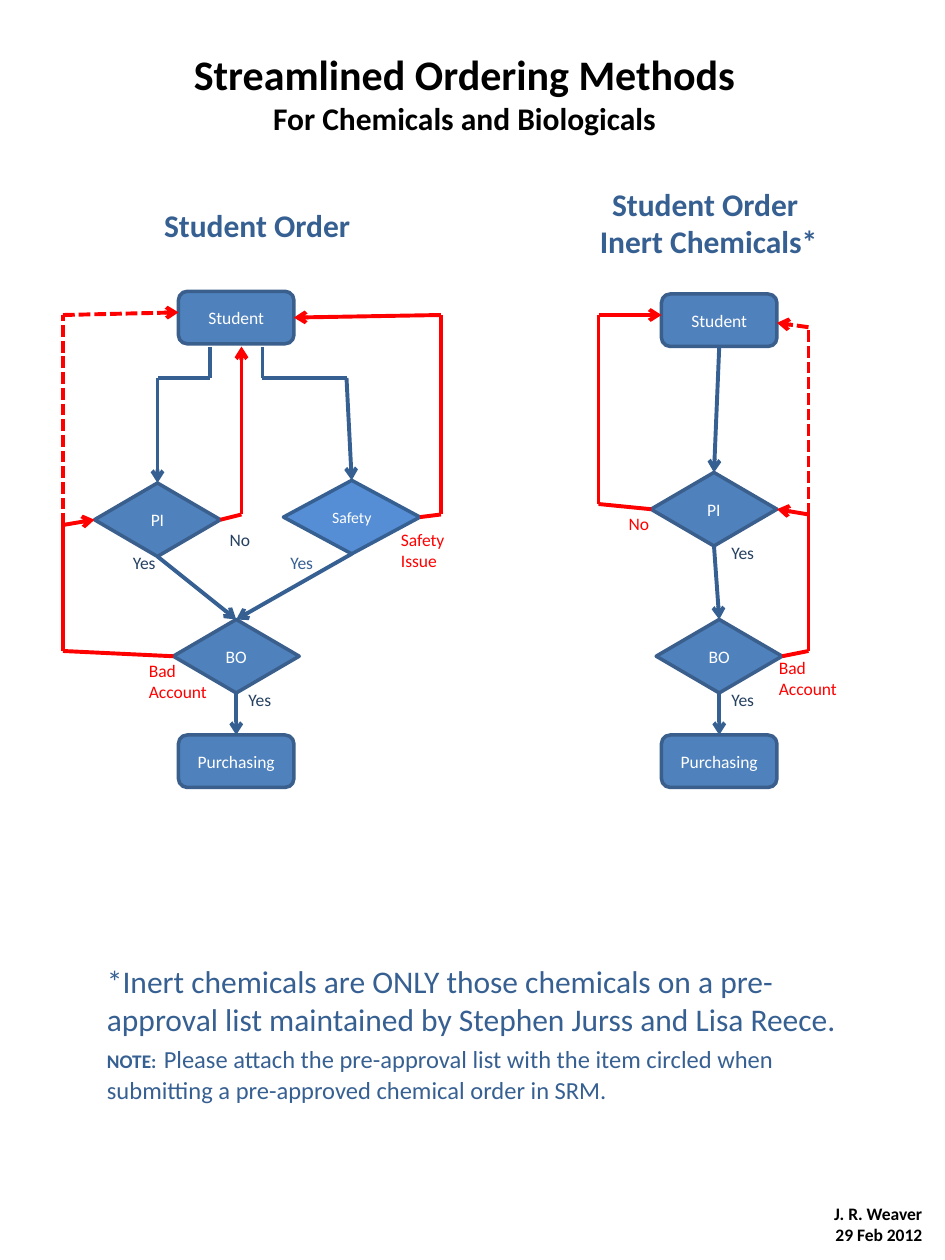
import pptx
import pptx.util
import pptx.dml.color
import pptx.enum.dml
import pptx.enum.shapes
import pptx.enum.text
import pptx.oxml

Pt = pptx.util.Pt
Kind = pptx.enum.shapes.MSO_SHAPE
Align = pptx.enum.text.PP_ALIGN
COLORS = {"black": "000000", "white": "FFFFFF", "fill": "4F81BD", "edge": "3A5F8C",
          "light": "558ED5", "blue": "376092", "navy": "254061", "red": "FF0000"}
STEP, TEST = Kind.FLOWCHART_ALTERNATE_PROCESS, Kind.FLOWCHART_DECISION
SIZES = {STEP: (66, 30), TEST: (72, 42)}


def rgb(name):
    return pptx.dml.color.RGBColor.from_string(COLORS[name])


def put_run(para, text, size, color, bold=False):
    run = para.add_run()
    run.text = text
    font = run.font
    font.name, font.size, font.bold = "Calibri", Pt(size), bold
    font.color.rgb = rgb(color)


def put_text(slide, box, lines, size, color, align=Align.LEFT, bold=False, wrap=True):
    """Put one paragraph for each line in a text box."""
    frame = slide.shapes.add_textbox(*map(Pt, box)).text_frame
    frame.word_wrap = wrap
    for i, line in enumerate(lines):
        para = frame.add_paragraph() if i else frame.paragraphs[0]
        para.alignment = align
        put_run(para, line, size, color, bold)
    return frame


def put_node(slide, kind, x, y, text, wide=None, fill="fill", edge="edge", size=10):
    width, height = SIZES[kind]
    node = slide.shapes.add_shape(kind, Pt(x), Pt(y), Pt(wide or width), Pt(height))
    node.shadow.inherit = False
    node.fill.solid()
    node.fill.fore_color.rgb = rgb(fill)
    node.line.color.rgb = rgb(edge)
    node.line.width = Pt(2)
    frame = node.text_frame
    frame.vertical_anchor = pptx.enum.text.MSO_ANCHOR.MIDDLE
    frame.paragraphs[0].alignment = Align.CENTER
    put_run(frame.paragraphs[0], text, size, "white")
    return node


def put_path(slide, left, top, nodes, stops, color, dash=False):
    """Draw lines from stop to stop, with an arrowhead at the last one.

    A stop is a local point, or a node's name with the number of its side.
    """
    last = len(stops) - 2
    for i, (start, end) in enumerate(zip(stops, stops[1:])):
        line = slide.shapes.add_connector(pptx.enum.shapes.MSO_CONNECTOR.STRAIGHT, 0, 0, 0, 0)
        if start[0] in nodes:
            line.begin_connect(nodes[start[0]], start[1])
        else:
            line.begin_x, line.begin_y = Pt(left + start[0]), Pt(top + start[1])
        if end[0] in nodes:
            line.end_connect(nodes[end[0]], end[1])
        else:
            line.end_x, line.end_y = Pt(left + end[0]), Pt(top + end[1])
        line.line.color.rgb = rgb(color)
        line.line.width = Pt(2.25)
        if dash:
            line.line.dash_style = pptx.enum.dml.MSO_LINE.SQUARE_DOT
        props = line._element.spPr
        if i == last:
            tip = pptx.oxml.parse_xml(
                '<a:tailEnd xmlns:a="http://schemas.openxmlformats.org/drawingml/2006/main"'
                ' type="arrow"/>')
            line.line._get_or_add_ln().append(tip)
        props.append(pptx.oxml.parse_xml(
            '<a:effectLst xmlns:a="http://schemas.openxmlformats.org/drawingml/2006/main"/>'))


def put_flow(slide, left, top, parts, paths, notes):
    """Draw one flow chart; all its places are relative to left and top."""
    nodes = {}
    for name, kind, x, y, style in parts:
        nodes[name] = put_node(slide, kind, left + x, top + y, name, **style)
    for color, dash, stops in paths:
        put_path(slide, left, top, nodes, stops, color, dash)
    for x, y, lines, color in notes:
        pair = len(lines) > 1
        box = (left + x, top + y, 48 if pair else 30, 32 if pair else 19.5)
        put_text(slide, box, lines, 10, color, Align.LEFT if pair else Align.RIGHT)


def put_left(slide, left, top):
    parts = [("Student", STEP, 66, 4.5, {}),
             ("PI", TEST, 18, 114, {}),
             ("Safety", TEST, 126, 112.5,
              {"wide": 78, "fill": "light", "edge": "blue", "size": 9}),
             ("BO", TEST, 63, 192, {}),
             ("Purchasing", STEP, 66, 258, {})]
    paths = [("blue", False, [(84, 36), (84, 54), (54, 54), ("PI", 0)]),
             ("blue", False, [(114, 36), (114, 54), (162, 54), ("Safety", 0)]),
             ("blue", False, [("PI", 2), ("BO", 0)]),
             ("blue", False, [("Safety", 2), ("BO", 0)]),
             ("blue", False, [("BO", 2), ("Purchasing", 0)]),
             ("red", False, [("PI", 3), (102, 132), (102, 36)]),
             ("red", False, [("Safety", 3), (216, 132), (216, 18), ("Student", 3)]),
             ("red", False, [("BO", 1), (0, 210), (0, 138), ("PI", 1)]),
             ("red", True, [(0, 138), (0, 18), (66, 16.5)])]
    notes = [(84, 137, ["No"], "navy"),
             (186, 137, ["Safety", "Issue"], "red"),
             (120, 150, ["Yes"], "blue"),
             (30, 150, ["Yes"], "navy"),
             (96, 228, ["Yes"], "navy"),
             (42, 211.5, ["Bad", "Account"], "red")]
    put_flow(slide, left, top, parts, paths, notes)


def put_right(slide, left, top):
    parts = [("Student", STEP, 36, 6, {}),
             ("PI", TEST, 30, 108, {}),
             ("BO", TEST, 33, 192, {}),
             ("Purchasing", STEP, 36, 258, {})]
    paths = [("blue", False, [("Student", 2), ("PI", 0)]),
             ("blue", False, [("PI", 2), ("BO", 0)]),
             ("blue", False, [("BO", 2), ("Purchasing", 0)]),
             ("red", False, [("PI", 1), (0, 126), (0, 18), (36, 18)]),
             ("red", False, [("BO", 3), (120, 210), (120, 132), ("PI", 3)]),
             ("red", True, [(120, 132), (120, 25), (102, 22.5)])]
    notes = [(6, 127.5, ["No"], "red"),
             (66, 144, ["Yes"], "navy"),
             (66, 228, ["Yes"], "navy"),
             (96, 210, ["Bad", "Account"], "red")]
    put_flow(slide, left, top, parts, paths, notes)


def put_heads(slide):
    # Slide title, with a smaller second line
    frame = put_text(slide, (102, 24, 327, 58), ["Streamlined Ordering Methods"],
                     24, "black", Align.CENTER, True, wrap=False)
    para = frame.add_paragraph()
    para.alignment = Align.CENTER
    put_run(para, "For Chemicals and Biologicals", 18, "black", True)
    # Chart headings
    put_text(slide, (60, 114, 174, 30), ["Student Order"], 18, "blue", Align.CENTER, True)
    frame = put_text(slide, (318, 102, 174, 51), ["Student Order "],
                     18, "blue", Align.CENTER, True)
    frame.paragraphs[0].add_line_break()
    put_run(frame.paragraphs[0], "Inert Chemicals*", 18, "blue", True)


def put_foot(slide, box):
    # Footnote
    frame = put_text(slide, box, [
        "*Inert chemicals are ONLY those chemicals on a pre-approval list "
        "maintained by Stephen Jurss and Lisa Reece. "], 18, "blue")
    para = frame.paragraphs[0]
    put_run(para, "NOTE:", 11, "blue", True)
    put_run(para, " ", 18, "blue")
    put_run(para, "Please attach the pre-approval list with the item circled when "
            "submitting a pre-approved chemical order in SRM.", 14, "blue")
    # Author and date
    put_text(slide, (438, 684, 96, 31.5), ["J. R. Weaver", "29 Feb 2012"],
             10, "black", Align.RIGHT, True)


def main():
    deck = pptx.Presentation()
    deck.slide_width, deck.slide_height = Pt(540), Pt(720)
    slide = deck.slides.add_slide(deck.slide_layouts[6])
    put_heads(slide)
    put_left(slide, 36, 162)
    put_right(slide, 342, 162)
    put_foot(slide, (54, 546, 456, 90))
    deck.save("out.pptx")


if __name__ == "__main__":
    main()
